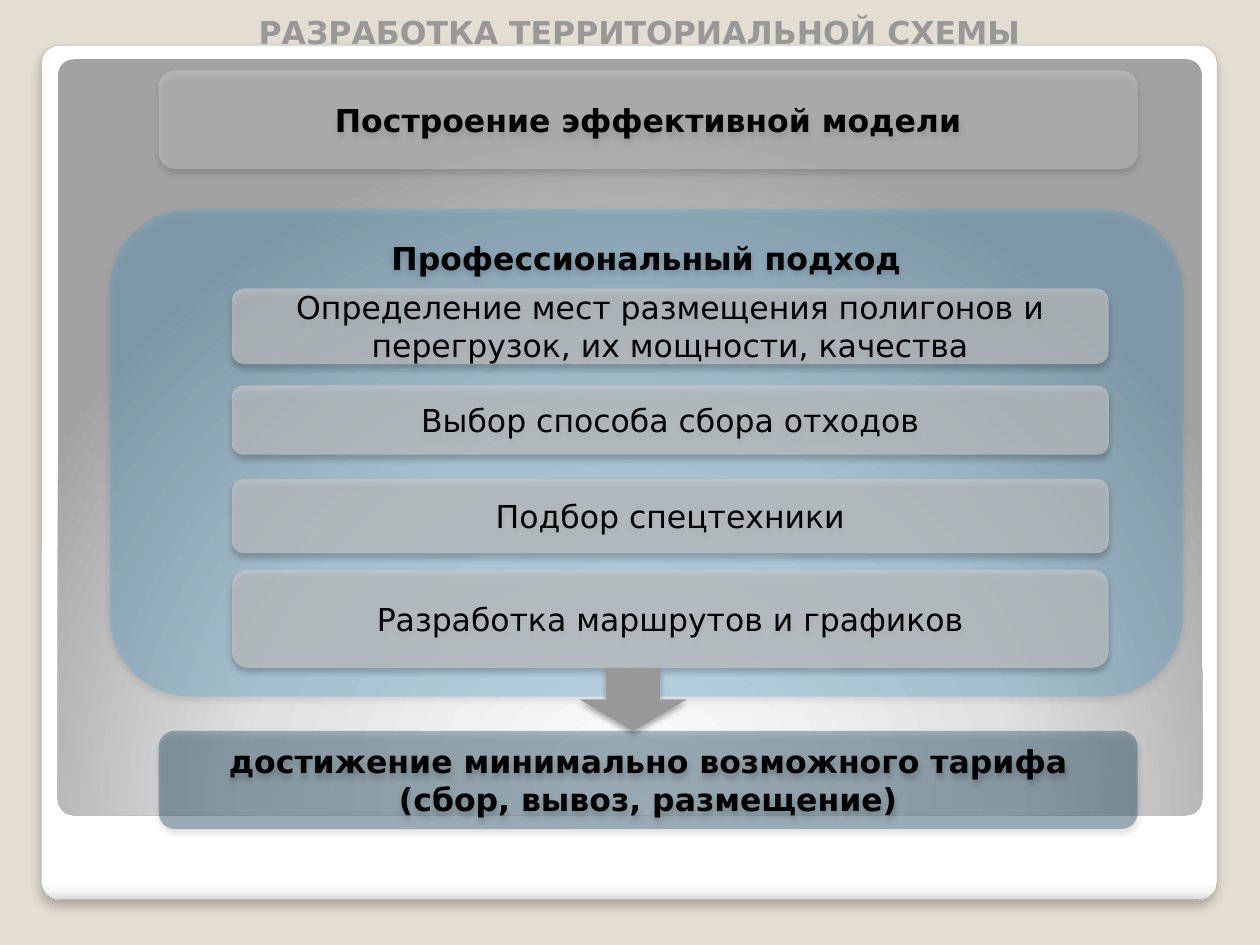
import pptx
import pptx.util
import pptx.oxml
import pptx.dml.color
import pptx.enum.shapes
import pptx.enum.text
import pptx.oxml.ns

Kind = pptx.enum.shapes.MSO_SHAPE
Anchor = pptx.enum.text.MSO_ANCHOR
Inches = pptx.util.Inches

# Horizontal spans (left, width), in percent of the slide's width
COLUMNS = {
    "sheet": (3.3, 93.3), "backdrop": (4.6, 90.8), "title": (5.5, 89.5),
    "panel": (8.7, 85.2), "banner": (12.6, 77.7), "step": (18.4, 69.6),
    "arrow": (46, 8.5),
}

TITLE = "РАЗРАБОТКА ТЕРРИТОРИАЛЬНОЙ СХЕМЫ"
TITLE_ROW = (0, 5.87)

# Text, style, top and height in percent of the slide's height; back to front
CARDS = [
    ("Профессиональный подход", "panel", 22.13, 51.6),
    ("достижение минимально возможного тарифа (сбор, вывоз, размещение)",
     "result", 77.33, 10.4),
    ("Определение мест размещения полигонов и перегрузок, их мощности, качества",
     "step", 30.53, 8),
    ("Выбор способа сбора отходов", "step", 40.8, 7.33),
    ("Подбор спецтехники", "step", 50.67, 7.87),
    ("Разработка маршрутов и графиков", "step", 60.27, 10.4),
    ("Построение эффективной модели", "goal", 7.47, 10.4),
    ("", "arrow", 70.67, 6.67),
]

THEME = {
    "size": (10, 7.5),
    "background": "E3DED1",
    "font": {"name": "DejaVu Sans", "size": pptx.util.Pt(18)},
    "text": "000000",
    "title": "989898",
    "sheet_line": ("A4A4A4", 0.16),
    "corner": 0.021,
    # Colour, opacity %, blur pt, distance pt
    "sheet_shadow": ("000000", 25, 6, 4),
    "card_shadow": ("000000", 32, 3.5, 2.2),
    "sheet_stops": [(0, "FFFFFF"), (98, "FFFFFF"), (99, "F7F7F7"), (100, "DADADA")],
    "backdrop_stops": [(0, "FFFFFF"), (55, "E1E1E1"), (100, "A2A2A2")],
    "sheet_path": '<a:lin ang="5400000" scaled="0"/>',
    "backdrop_path": '<a:path path="circle"><a:fillToRect l="50000" t="175000" '
                     'r="50000" b="-75000"/></a:path>',
}

# Column, preset, fill, opacity %, bold, anchor
STYLES = {
    "panel": ("panel", Kind.ROUNDED_RECTANGLE, "4EA5D8", 29, True, Anchor.TOP),
    "result": ("banner", Kind.ROUNDED_RECTANGLE, "14425D", 35, True, Anchor.MIDDLE),
    "step": ("step", Kind.ROUNDED_RECTANGLE, "CCCCCC", 62, False, Anchor.MIDDLE),
    "goal": ("banner", Kind.ROUNDED_RECTANGLE, "D9D9D9", 38, True, Anchor.MIDDLE),
    "arrow": ("arrow", Kind.DOWN_ARROW, "989898", 100, False, Anchor.MIDDLE),
}


def rgb(code):
    return pptx.dml.color.RGBColor.from_string(code)


def apply(target, values):
    for name, value in values.items():
        setattr(target, name, value)


def drawing_xml(tag, attributes, inner):
    return pptx.oxml.parse_xml(
        f'<a:{tag} {pptx.oxml.ns.nsdecls("a")} {attributes}>{inner}</a:{tag}>')


def place(column, top, height):
    """Turn a named column and a row in percent into a rectangle."""
    width_unit, height_unit = (side / 100 for side in THEME["size"])
    left, width = COLUMNS[column]
    return (Inches(left * width_unit), Inches(top * height_unit),
            Inches(width * width_unit), Inches(height * height_unit))


def add_shape(page, preset, rectangle, shadow=None):
    shape = page.shapes.add_shape(preset, *rectangle)
    shape.fill.background()
    shape.line.fill.background()
    shape.shadow.inherit = False
    if shadow:
        color, opacity, blur, distance = shadow
        effects = shape._element.spPr.find(pptx.oxml.ns.qn("a:effectLst"))
        effects.append(drawing_xml(
            "outerShdw",
            f'blurRad="{pptx.util.Pt(blur)}" dist="{pptx.util.Pt(distance)}" '
            'dir="5400000" algn="ctr" rotWithShape="0"',
            f'<a:srgbClr val="{color}"><a:alpha val="{opacity * 1000}"/></a:srgbClr>'))
    return shape


def add_frame(page, name, top, height, shadow=None):
    """Add a large gradient-filled frame behind the cards."""
    frame = add_shape(page, Kind.ROUNDED_RECTANGLE, place(name, top, height), shadow)
    frame.adjustments[0] = THEME["corner"]
    stops = "".join(
        f'<a:gs pos="{position * 1000}"><a:srgbClr val="{color}"/></a:gs>'
        for position, color in THEME[name + "_stops"])
    gradient = drawing_xml("gradFill", 'rotWithShape="1"',
                           f'<a:gsLst>{stops}</a:gsLst>{THEME[name + "_path"]}')
    properties = frame._element.spPr
    properties.replace(properties.find(pptx.oxml.ns.qn("a:noFill")), gradient)
    return frame


def write(box, text, color, bold):
    box.text_frame.word_wrap = True
    para = box.text_frame.paragraphs[0]
    para.alignment = pptx.enum.text.PP_ALIGN.CENTER
    span = para.add_run()
    span.text = text
    apply(span.font, {**THEME["font"], "bold": bold})
    span.font.color.rgb = rgb(color)
    return para


def add_title(page):
    box = page.shapes.add_textbox(*place("title", *TITLE_ROW))
    para = write(box, TITLE, THEME["title"], True)
    para.space_before = pptx.util.Pt(2.5)
    apply(box.text_frame, {"margin_left": Inches(0.2), "margin_top": Inches(0.1),
                           "margin_right": Inches(0.1), "margin_bottom": Inches(0.05)})


def add_card(page, text, style, top, height):
    column, preset, color, opacity, bold, anchor = STYLES[style]
    card = add_shape(page, preset, place(column, top, height), THEME["card_shadow"])
    card.fill.solid()
    card.fill.fore_color.rgb = rgb(color)
    if opacity < 100:
        solid = card._element.spPr.find(pptx.oxml.ns.qn("a:solidFill"))
        solid[0].append(drawing_xml("alpha", f'val="{opacity * 1000}"', ""))
    if text:
        write(card, text, THEME["text"], bold)
        card.text_frame.vertical_anchor = anchor


def main():
    deck = pptx.Presentation()
    deck.slide_width, deck.slide_height = map(Inches, THEME["size"])
    page = deck.slides.add_slide(deck.slide_layouts[6])
    page.background.fill.solid()
    page.background.fill.fore_color.rgb = rgb(THEME["background"])

    sheet = add_frame(page, "sheet", 4.8, 90.4, THEME["sheet_shadow"])
    line_color, line_width = THEME["sheet_line"]
    sheet.line.color.rgb = rgb(line_color)
    sheet.line.width = pptx.util.Pt(line_width)
    add_frame(page, "backdrop", 6.27, 80)

    panel, *cards = CARDS
    add_card(page, *panel)
    add_title(page)
    for card in cards:
        add_card(page, *card)
    deck.save("out.pptx")


if __name__ == "__main__":
    main()
